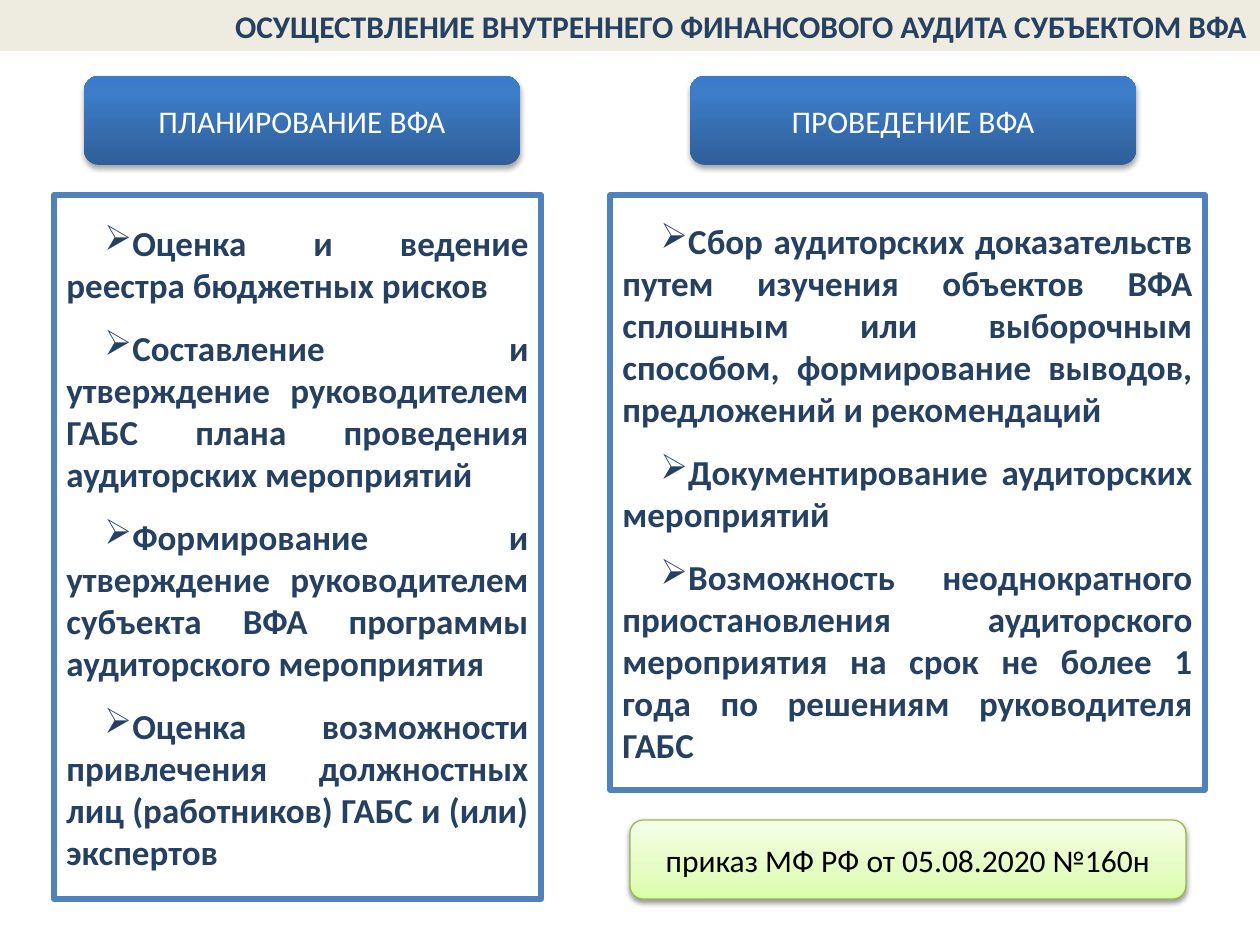
from lxml.etree import SubElement
from pptx import Presentation
from pptx.dml.color import RGBColor
from pptx.enum.shapes import MSO_SHAPE as SHAPE
from pptx.enum.text import MSO_ANCHOR as ANCHOR, MSO_AUTO_SIZE as AUTO_SIZE, PP_ALIGN as ALIGN
from pptx.oxml.ns import qn
from pptx.util import Pt

PX = 914400 / 126
NAVY, BLUE, WHITE, BLACK = "254061", "4F81BD", "FFFFFF", "000000"
BLUE_STOPS = [(0, "2F5F99"), (80, "3D7CC7"), (100, "3A7CCB")]
GREEN_STOPS = [(0, "DAFDA7"), (35, "E4FCC2"), (100, "F5FFE7")]


def rgb(color):
    return RGBColor.from_string(color)


def write(shape, lines, align, size, color, bold):
    """Fill a shape with paragraphs of one format."""
    frame = shape.text_frame
    frame.text = "\n".join(lines)
    frame_format = {"word_wrap": True, "auto_size": AUTO_SIZE.NONE,
                    "vertical_anchor": ANCHOR.MIDDLE}
    for key, value in frame_format.items():
        setattr(frame, key, value)
    for paragraph in frame.paragraphs:
        paragraph.alignment = align
        font = paragraph.runs[0].font
        for key, value in {"name": "Calibri", "size": Pt(size), "bold": bold}.items():
            setattr(font, key, value)
        font.color.rgb = rgb(color)


deck = Presentation()
deck.slide_width, deck.slide_height = round(1260 * PX), round(945 * PX)
slide = deck.slides.add_slide(deck.slide_layouts[5])

# Heading band across the top
heading = slide.shapes.title
heading.left, heading.top = 0, 0
heading.width, heading.height = deck.slide_width, round(51 * PX)
heading.fill.solid()
heading.fill.fore_color.rgb = rgb("EEECE1")
write(heading, ["ОСУЩЕСТВЛЕНИЕ ВНУТРЕННЕГО ФИНАНСОВОГО АУДИТА СУБЪЕКТОМ ВФА"],
      ALIGN.RIGHT, 18, NAVY, True)

# Stage headers and the order reference: gradient plates with a soft shadow
plates = [
    ("ПЛАНИРОВАНИЕ ВФА", (84, 76, 436, 89), BLUE_STOPS, None, WHITE, 35),
    ("ПРОВЕДЕНИЕ ВФА", (690, 76, 446, 89), BLUE_STOPS, None, WHITE, 35),
    ("приказ МФ РФ от 05.08.2020 №160н", (630, 820, 556, 79),
     GREEN_STOPS, "98B955", BLACK, 38),
]
for label, box, stops, outline, text_color, shadow_alpha in plates:
    plate = slide.shapes.add_shape(SHAPE.ROUNDED_RECTANGLE, *[round(n * PX) for n in box])
    plate.fill.gradient()
    plate.fill.gradient_angle = 90
    stop_list = next(plate.element.spPr.iter(qn("a:gsLst")))
    for old_stop in list(stop_list):
        stop_list.remove(old_stop)
    for position, color in stops:
        stop = SubElement(stop_list, qn("a:gs"), pos=str(position * 1000))
        SubElement(stop, qn("a:srgbClr"), val=color)
    if outline:
        plate.line.color.rgb = rgb(outline)
        plate.line.width = Pt(0.75)
    else:
        plate.line.fill.background()
    plate.shadow.inherit = False
    effects = plate.element.spPr.find(qn("a:effectLst"))
    shadow = SubElement(effects, qn("a:outerShdw"), blurRad=str(Pt(3.1)),
                        dist=str(Pt(1.7)), dir="5400000", rotWithShape="0")
    shade = SubElement(shadow, qn("a:srgbClr"), val=BLACK)
    SubElement(shade, qn("a:alpha"), val=str(shadow_alpha * 1000))
    write(plate, [label], ALIGN.CENTER, 18, text_color, False)

# Framed lists of steps under each stage
panels = [
    ((54, 195, 487, 704), [
        "Оценка и ведение реестра бюджетных рисков",
        "Составление и утверждение руководителем ГАБС плана проведения "
        "аудиторских мероприятий",
        "Формирование и утверждение руководителем субъекта ВФА программы "
        "аудиторского мероприятия",
        "Оценка возможности привлечения должностных лиц (работников) ГАБС "
        "и (или) экспертов",
    ]),
    ((610, 195, 595, 595), [
        "Сбор аудиторских доказательств путем изучения объектов ВФА сплошным "
        "или выборочным способом, формирование выводов, предложений и рекомендаций",
        "Документирование аудиторских мероприятий",
        "Возможность неоднократного приостановления аудиторского мероприятия "
        "на срок не более 1 года по решениям руководителя ГАБС",
    ]),
]
for box, steps in panels:
    panel = slide.shapes.add_shape(SHAPE.RECTANGLE, *[round(n * PX) for n in box])
    panel.shadow.inherit = False
    panel.fill.solid()
    panel.fill.fore_color.rgb = rgb(WHITE)
    panel.line.color.rgb = rgb(BLUE)
    panel.line.width = Pt(3)
    write(panel, steps, ALIGN.JUSTIFY, 20, NAVY, True)
    for step in panel.text_frame.paragraphs:
        step.space_after = Pt(12)
        properties = step._p.get_or_add_pPr()
        properties.set("marL", "0")
        properties.set("indent", str(round(38 * PX)))
        SubElement(properties, qn("a:buChar"), char="➢")

deck.save("out.pptx")
